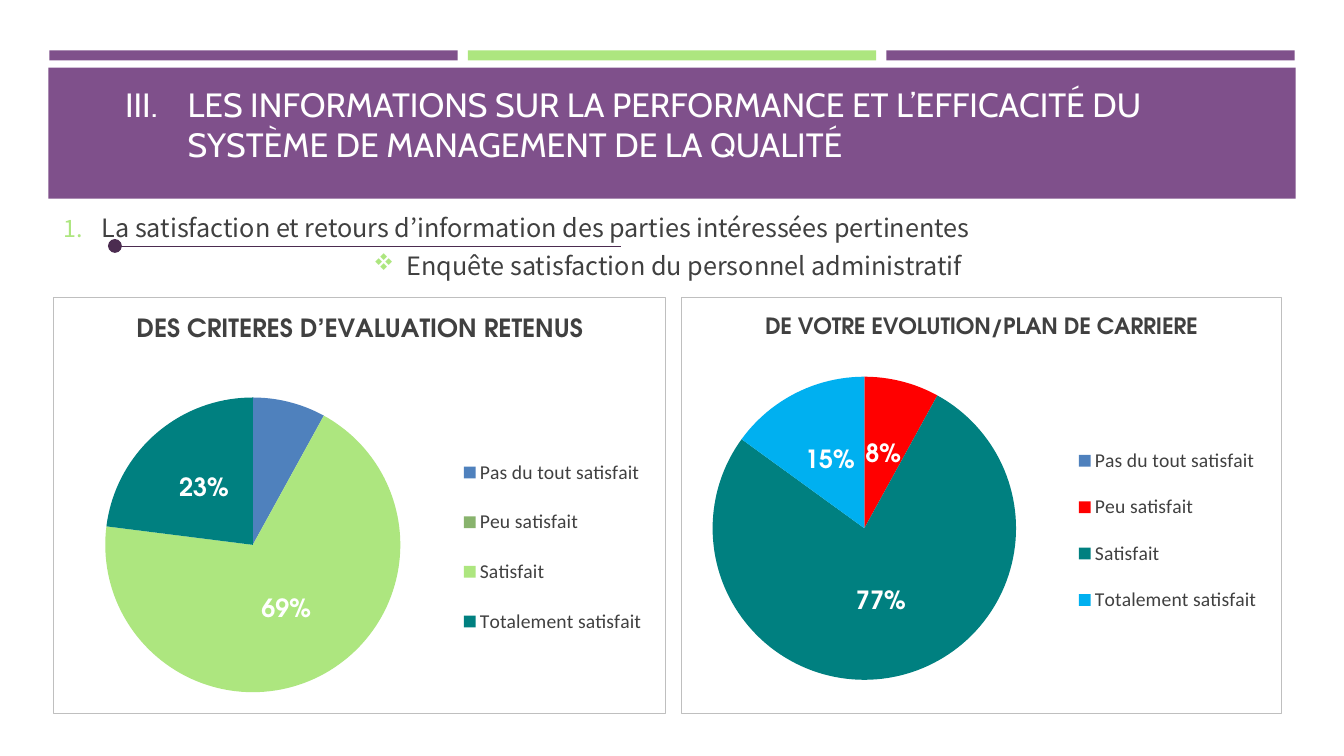
import pptx
import pptx.chart.data
import pptx.dml.color
import pptx.enum.chart
import pptx.enum.shapes
import pptx.enum.text
import pptx.oxml
import pptx.oxml.ns
import pptx.util
from pptx.util import Inches

COLORS = {
    "purple": "7F508B", "dark_purple": "4B2C50", "green": "ADE67F",
    "leaf": "88B36D", "teal": "008080", "blue": "4F81BD", "sky": "00B0F0",
    "red": "FF0000", "white": "FFFFFF", "text": "404040", "border": "BFBFBF",
}
TITLE_FONT = "Cabin"
BODY_FONT = "Noto Sans CJK KR"
CHART_FONT = "TeX Gyre Adventor"
LEGEND_FONT = "Calibri"
RATINGS = ["Pas du tout satisfait", "Peu satisfait", "Satisfait", "Totalement satisfait"]


def rgb(name):
    return pptx.dml.color.RGBColor.from_string(COLORS[name])


def xml(text):
    """Parse an XML fragment that uses the a: and c: prefixes."""
    head, tail = text.split(">", 1)
    slash = "/" if head.endswith("/") else ""
    return pptx.oxml.parse_xml(
        f'{head.rstrip("/")} {pptx.oxml.ns.nsdecls("a", "c")}{slash}>{tail}')


def style(font, name, size, color, bold=False):
    font.name = name
    font.size = pptx.util.Pt(size)
    font.bold = bold
    font.color.rgb = rgb(color)


def add_bar(page, left, top, width, height, color):
    bar = page.shapes.add_shape(
        pptx.enum.shapes.MSO_SHAPE.RECTANGLE,
        Inches(left), Inches(top), Inches(width), Inches(height))
    bar.shadow.inherit = False
    bar.fill.solid()
    bar.fill.fore_color.rgb = rgb(color)
    bar.line.fill.background()


def set_bullet(para, indent, *marks):
    properties = para._p.get_or_add_pPr()
    properties.set("marL", str(Inches(indent)))
    properties.set("indent", str(-Inches(indent)))
    for mark in marks:
        properties.append(xml(mark))


def add_run(para, text, font, size, color):
    span = para.add_run()
    span.text = text
    style(span.font, font, size, color)


def fill_title(page):
    title = page.shapes.title
    title.left, title.top = Inches(1.14), Inches(0.21)
    title.width, title.height = Inches(11.58), Inches(1.47)
    frame = title.text_frame
    frame.word_wrap = True
    frame.auto_size = pptx.enum.text.MSO_AUTO_SIZE.NONE
    frame.vertical_anchor = pptx.enum.text.MSO_ANCHOR.BOTTOM
    para = frame.paragraphs[0]
    set_bullet(para, 0.62, '<a:buFont typeface="+mj-lt"/>',
               '<a:buAutoNum type="romanUcPeriod" startAt="3"/>')
    para.alignment = pptx.enum.text.PP_ALIGN.LEFT
    add_run(para, "LES INFORMATIONS SUR LA PERFORMANCE ET L’EFFICACITÉ DU "
            "SYSTÈME DE MANAGEMENT DE LA QUALITÉ", TITLE_FONT, 24, "white")
    # The title has to stand in front of the purple band.
    title.element.getparent().append(title.element)


def add_headings(page):
    box = page.shapes.add_textbox(Inches(0.53), Inches(1.79), Inches(12.19), Inches(1.31))
    frame = box.text_frame
    frame.word_wrap = True
    frame.vertical_anchor = pptx.enum.text.MSO_ANCHOR.MIDDLE
    align = pptx.enum.text.PP_ALIGN
    headings = [
        ("La satisfaction et retours d’information des parties intéressées pertinentes",
         0.38, align.LEFT, '<a:buFont typeface="+mj-lt"/>', '<a:buAutoNum type="arabicPeriod"/>'),
        ("Enquête satisfaction du personnel administratif",
         0.33, align.CENTER, '<a:buFont typeface="Wingdings"/>', '<a:buChar char="v"/>'),
    ]
    for index, (text, indent, alignment, bullet_font, bullet) in enumerate(headings):
        para = frame.add_paragraph() if index else frame.paragraphs[0]
        set_bullet(para, indent,
                   f'<a:buClr><a:srgbClr val="{COLORS["green"]}"/></a:buClr>',
                   '<a:buSzPct val="92000"/>', bullet_font, bullet)
        para.alignment = alignment
        para.space_before = pptx.util.Pt(5 if index else 0)
        add_run(para, text, BODY_FONT, 18, "text")


def add_underline(page):
    line = page.shapes.add_connector(
        pptx.enum.shapes.MSO_CONNECTOR.STRAIGHT,
        Inches(1.14), Inches(2.44), Inches(6.16), Inches(2.44))
    line.line.color.rgb = rgb("dark_purple")
    line.line.width = pptx.util.Pt(0.25)
    line.line._get_or_add_ln().append(xml('<a:headEnd type="oval" w="lg" len="lg"/>'))
    line._element.spPr.append(xml("<a:effectLst/>"))


def manual_layout(left, top, width, height, inner=False):
    target = '<c:layoutTarget val="inner"/>' if inner else ""
    sizes = "".join(f'<c:{key} val="{value}"/>' for key, value in
                    zip("xywh", (left, top, width, height)))
    return xml(f'<c:layout><c:manualLayout>{target}<c:xMode val="edge"/>'
               f'<c:yMode val="edge"/>{sizes}</c:manualLayout></c:layout>')


def add_pie(page, left, width, title, title_size, values, colors, hidden, plot, legend):
    """Add a pie; hidden lists the points without label, plot and legend are fractions."""
    data = pptx.chart.data.CategoryChartData()
    data.categories = RATINGS
    data.add_series("Series 1", values)
    chart = page.shapes.add_chart(
        pptx.enum.chart.XL_CHART_TYPE.PIE,
        Inches(left), Inches(2.95), Inches(width), Inches(4.13), data).chart
    style(chart.font, TITLE_FONT, 10, "text")
    chart._chartSpace.find(pptx.oxml.ns.qn("c:txPr")).addprevious(xml(
        '<c:spPr><a:noFill/><a:ln w="9525"><a:solidFill>'
        f'<a:srgbClr val="{COLORS["border"]}"/></a:solidFill></a:ln></c:spPr>'))

    chart.has_title = True
    span = chart.chart_title.text_frame.paragraphs[0].add_run()
    span.text = title
    style(span.font, CHART_FONT, title_size, "text", bold=True)
    chart.chart_title.include_in_layout = False

    chart.has_legend = True
    chart.legend.position = pptx.enum.chart.XL_LEGEND_POSITION.RIGHT
    chart.legend.include_in_layout = False
    style(chart.legend.font, LEGEND_FONT, 14, "text")
    chart.legend._element.find(pptx.oxml.ns.qn("c:legendPos")).addnext(manual_layout(*legend))

    area = chart._chartSpace.chart.plotArea
    for layout in area.findall(pptx.oxml.ns.qn("c:layout")):
        area.remove(layout)
    area.insert(0, manual_layout(*plot, inner=True))

    pie = chart.plots[0]
    pie.vary_by_categories = True
    series = pie.series[0]
    for index, color in enumerate(colors):
        fill = series.points[index].format.fill
        fill.solid()
        fill.fore_color.rgb = rgb(color)
    labels = series.data_labels
    labels.show_percentage = True
    labels.show_value = False
    labels.number_format = "0%"
    labels.number_format_is_linked = False
    labels.position = pptx.enum.chart.XL_LABEL_POSITION.CENTER
    style(labels.font, CHART_FONT, 18, "white", bold=True)
    for place, index in enumerate(hidden):
        labels._element.insert(place, xml(
            f'<c:dLbl><c:idx val="{index}"/><c:delete val="1"/></c:dLbl>'))


def main():
    deck = pptx.Presentation()
    deck.slide_width, deck.slide_height = Inches(13.33), Inches(7.5)
    page = deck.slides.add_slide(deck.slide_layouts[5])
    for index, color in enumerate(["purple", "green", "purple"]):
        add_bar(page, 0.49 + 4.15 * index, 0.5, 4.05, 0.1, color)
    add_bar(page, 0.48, 0.67, 12.37, 1.3, "purple")
    fill_title(page)
    add_headings(page)
    add_underline(page)
    add_pie(page, 0.53, 6.08, "DES CRITERES D’EVALUATION RETENUS", 18,
            (8, 0, 69, 23), ("blue", "leaf", "green", "teal"), (0, 1),
            (0.03, 0.24, 0.59, 0.71), (0.65, 0.33, 0.33, 0.54))
    add_pie(page, 6.75, 5.97, "DE VOTRE EVOLUTION/PLAN DE CARRIERE", 16,
            (0, 8, 77, 15), ("blue", "red", "teal", "sky"), (0,),
            (0.05, 0.19, 0.51, 0.73), (0.64, 0.31, 0.34, 0.5))
    deck.save("out.pptx")


if __name__ == "__main__":
    main()
